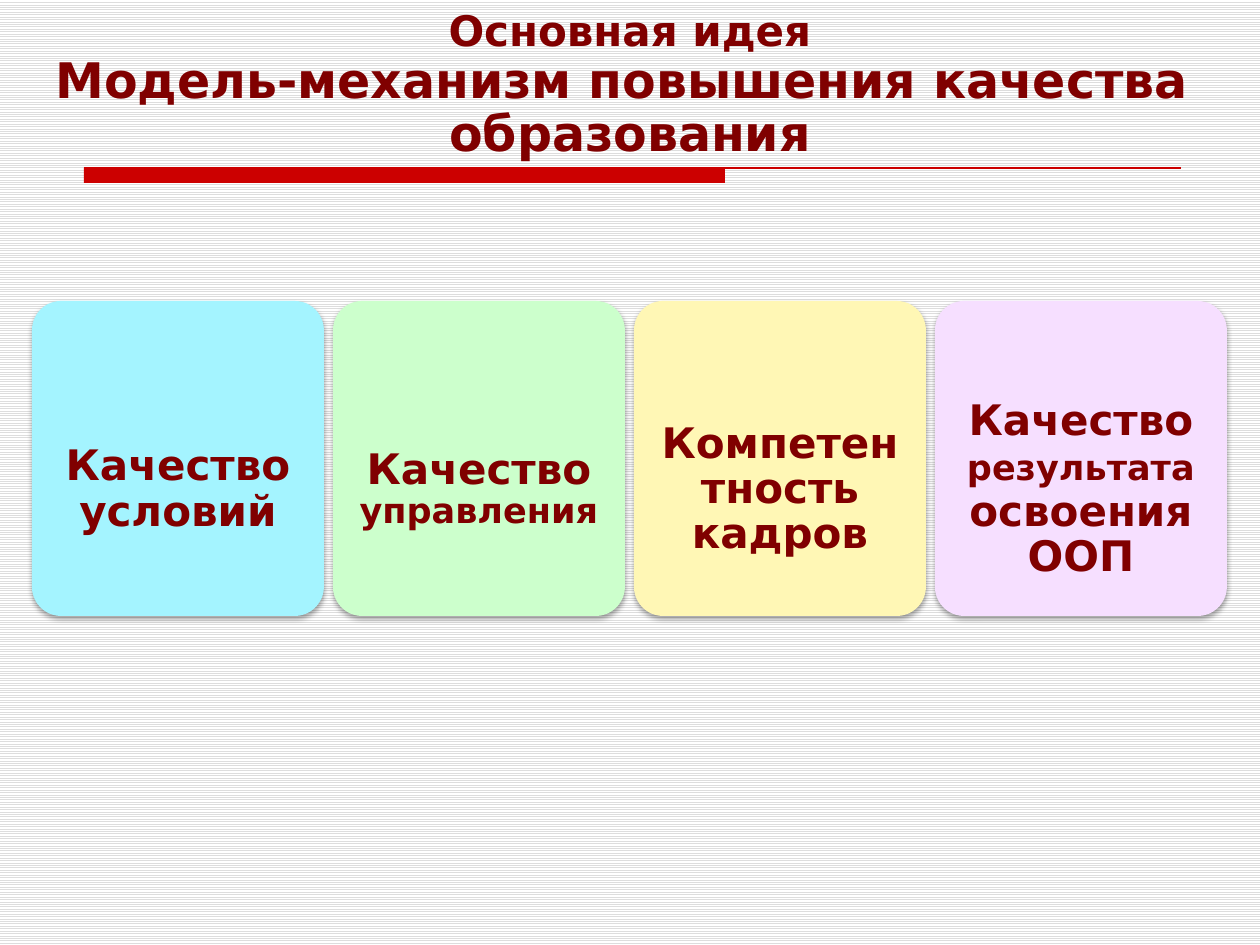
from lxml.etree import SubElement
from pptx import Presentation
from pptx.dml.color import RGBColor
from pptx.enum.dml import MSO_PATTERN
from pptx.enum.shapes import MSO_CONNECTOR, MSO_SHAPE
from pptx.enum.text import MSO_ANCHOR, PP_ALIGN
from pptx.oxml.ns import qn
from pptx.util import Emu, Pt

COLORS = {
    "text": "800000", "rule": "CC0000", "stripe": "DDDDDD", "paper": "FFFFFF",
    "shadow": "000000", "conditions": "A4F4FF", "management": "CCFFCC",
    "staff": "FFF7B5", "results": "F6DFFF",
}
FONT = "DejaVu Sans"
HEADING = [[("Основная идея", 24)], [("Модель-механизм повышения качества ", 28)],
           [("образования", 28)]]
CARDS = [
    ("conditions", [("Качество условий", 24)]),
    ("management", [("Качество ", 24), ("управления", 20)]),
    ("staff", [("Компетентность кадров", 24)]),
    ("results", [("Качество ", 24), ("результата", 20), (" освоения ООП", 24)]),
]
CARD_LEFT, CARD_TOP, CARD_WIDTH, CARD_HEIGHT, CARD_STEP = 32, 301, 292, 315, 301
LABEL_TOP, LABEL_HEIGHT = 427, 126


def px(length):
    return Emu(round(length * 914400 / 126))


def rgb(name):
    return RGBColor.from_string(COLORS[name])


def set_all(target, values):
    for name, value in values.items():
        setattr(target, name, value)


def add_background(slide):
    fill = slide.background.fill
    fill.patterned()
    fill.pattern = MSO_PATTERN.LIGHT_HORIZONTAL
    fill.fore_color.rgb = rgb("stripe")
    fill.back_color.rgb = rgb("paper")


def add_block(slide, preset, box, color):
    block = slide.shapes.add_shape(preset, *map(px, box))
    block.shadow.inherit = False
    block.fill.solid()
    block.fill.fore_color.rgb = rgb(color)
    block.line.fill.background()
    return block


def add_rule(slide, left, right, top, bar_width, bar_height):
    add_block(slide, MSO_SHAPE.RECTANGLE, (left, top, bar_width, bar_height), "rule")
    thin = slide.shapes.add_connector(
        MSO_CONNECTOR.STRAIGHT, px(left), px(top), px(right), px(top))
    thin.line.color.rgb = rgb("rule")
    thin.line.width = Pt(0.75)
    SubElement(thin._element.spPr, qn("a:effectLst"))


def add_text(slide, box, lines, frame_format):
    frame = slide.shapes.add_textbox(*map(px, box)).text_frame
    set_all(frame, {"word_wrap": True, **frame_format})
    paragraph = frame.paragraphs[0]
    set_all(paragraph, {"alignment": PP_ALIGN.CENTER, "line_spacing": 0.9})
    for index, line in enumerate(lines):
        if index:
            paragraph.add_line_break()
        for words, size in line:
            run = paragraph.add_run()
            run.text = words
            set_all(run.font, {"name": FONT, "size": Pt(size), "bold": True})
            run.font.color.rgb = rgb("text")


def add_shadow(block):
    effects = block._element.spPr.find(qn("a:effectLst"))
    shadow = SubElement(effects, qn("a:outerShdw"), blurRad=str(Pt(3.1)),
                        dist=str(Pt(1.8)), dir="5400000", rotWithShape="0")
    tint = SubElement(shadow, qn("a:srgbClr"), val=COLORS["shadow"])
    SubElement(tint, qn("a:alpha"), val="35000")


def add_card(slide, left, color, label):
    card = add_block(slide, MSO_SHAPE.ROUNDED_RECTANGLE,
                     (left, CARD_TOP, CARD_WIDTH, CARD_HEIGHT), color)
    card.adjustments[0] = 0.1
    add_shadow(card)
    sides = ("left", "top", "right", "bottom")
    add_text(slide, (left, LABEL_TOP, CARD_WIDTH, LABEL_HEIGHT), [label],
             {"vertical_anchor": MSO_ANCHOR.MIDDLE,
              **{f"margin_{side}": px(24) for side in sides}})


def main():
    deck = Presentation()
    deck.slide_width, deck.slide_height = px(1260), px(945)
    slide = deck.slides.add_slide(deck.slide_layouts[6])
    add_background(slide)
    add_rule(slide, 84, 1181, 168, 641, 15)
    add_text(slide, (0, 0, 1260, 168), HEADING,
             {"vertical_anchor": MSO_ANCHOR.BOTTOM})
    for index, (color, label) in enumerate(CARDS):
        add_card(slide, CARD_LEFT + index * CARD_STEP, color, label)
    deck.save("out.pptx")


if __name__ == "__main__":
    main()
